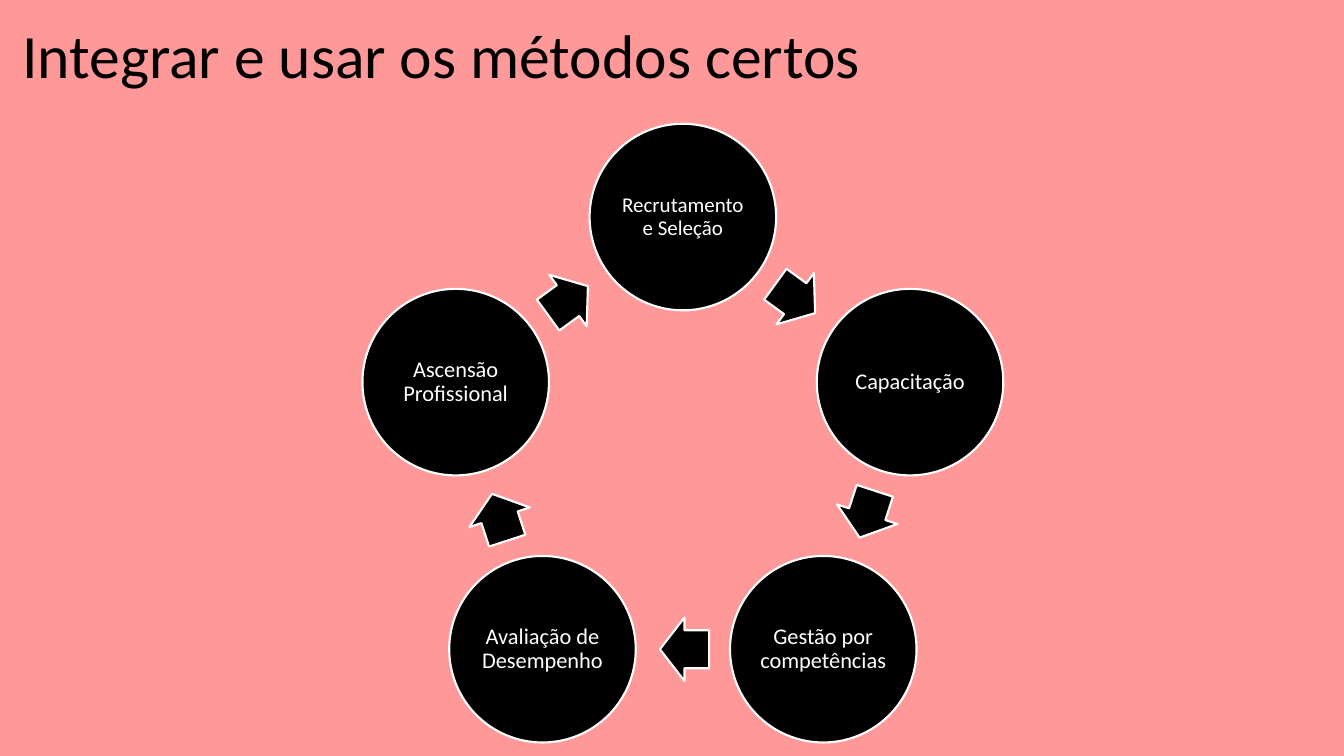
import math
from dataclasses import dataclass

from pptx import Presentation
from pptx.dml.color import RGBColor
from pptx.enum import shapes, text
from pptx.util import Cm, Pt

COLORS = {"background": "FF9999", "dark": "000000", "light": "FFFFFF"}
FONT = "Calibri"

# Ring geometry, in centimetres
CENTER_X, CENTER_Y = 17.21, 11.49
RADIUS = 6.02
DIAMETER = 4.7
ARROW_W, ARROW_H = 1.24, 1.6
ARROW_SETBACK = 0.04


@dataclass
class Step:
    label: str
    size: int = 16


STEPS = [
    Step("Recrutamento e Seleção", 15),
    Step("Capacitação"),
    Step("Gestão por competências"),
    Step("Avaliação de Desempenho"),
    Step("Ascensão Profissional"),
]


def color(name: str) -> RGBColor:
    return RGBColor.from_string(COLORS[name])


def write(sp, content: str, size: int, color_name: str, align) -> None:
    tf = sp.text_frame
    tf.word_wrap = True
    tf.vertical_anchor = text.MSO_ANCHOR.MIDDLE
    p = tf.paragraphs[0]
    p.text = content
    p.alignment = align
    p.line_spacing = 0.9
    font = p.runs[0].font
    font.name, font.size = FONT, Pt(size)
    font.color.rgb = color(color_name)


def add_black_shape(slide, kind, cx: float, cy: float, w: float, h: float):
    """Add a black shape with a white outline, centred on (cx, cy)."""
    sp = slide.shapes.add_shape(kind, Cm(cx - w / 2), Cm(cy - h / 2), Cm(w), Cm(h))
    sp.shadow.inherit = False
    sp.fill.solid()
    sp.fill.fore_color.rgb = color("dark")
    sp.line.color.rgb = color("light")
    sp.line.width = Pt(1.5)
    return sp


def add_circle(slide, step: Step, angle: float) -> None:
    a = math.radians(angle)
    sp = add_black_shape(slide, shapes.MSO_SHAPE.OVAL,
                         CENTER_X + RADIUS * math.sin(a),
                         CENTER_Y - RADIUS * math.cos(a), DIAMETER, DIAMETER)
    tf = sp.text_frame
    tf.margin_left = tf.margin_right = tf.margin_top = tf.margin_bottom = Cm(0.05)
    write(sp, step.label, step.size, "light", text.PP_ALIGN.CENTER)


def add_arrow(slide, angle: float, half_step: float) -> None:
    """Add an arrow along the ring, midway between two circles."""
    a = math.radians(angle)
    apothem = RADIUS * math.cos(math.radians(half_step))
    cx = CENTER_X + apothem * math.sin(a) - ARROW_SETBACK * math.cos(a)
    cy = CENTER_Y - apothem * math.cos(a) - ARROW_SETBACK * math.sin(a)
    sp = add_black_shape(slide, shapes.MSO_SHAPE.RIGHT_ARROW, cx, cy, ARROW_W, ARROW_H)
    sp.adjustments[0], sp.adjustments[1] = 0.6, 0.5
    sp.rotation = angle


def main() -> None:
    prs = Presentation()
    prs.slide_width, prs.slide_height = Cm(33.87), Cm(19.05)
    slide = prs.slides.add_slide(prs.slide_layouts[6])
    slide.background.fill.solid()
    slide.background.fill.fore_color.rgb = color("background")

    # Title
    title = slide.shapes.add_textbox(Cm(0.31), Cm(0.05), Cm(29.21), Cm(2.87))
    write(title, "Integrar e usar os métodos certos", 44, "dark", text.PP_ALIGN.LEFT)

    # Cycle of steps, clockwise from the top
    turn = 360 / len(STEPS)
    for i, step in enumerate(STEPS):
        add_circle(slide, step, i * turn)
        add_arrow(slide, (i + 0.5) * turn, turn / 2)

    prs.save("out.pptx")


if __name__ == "__main__":
    main()
